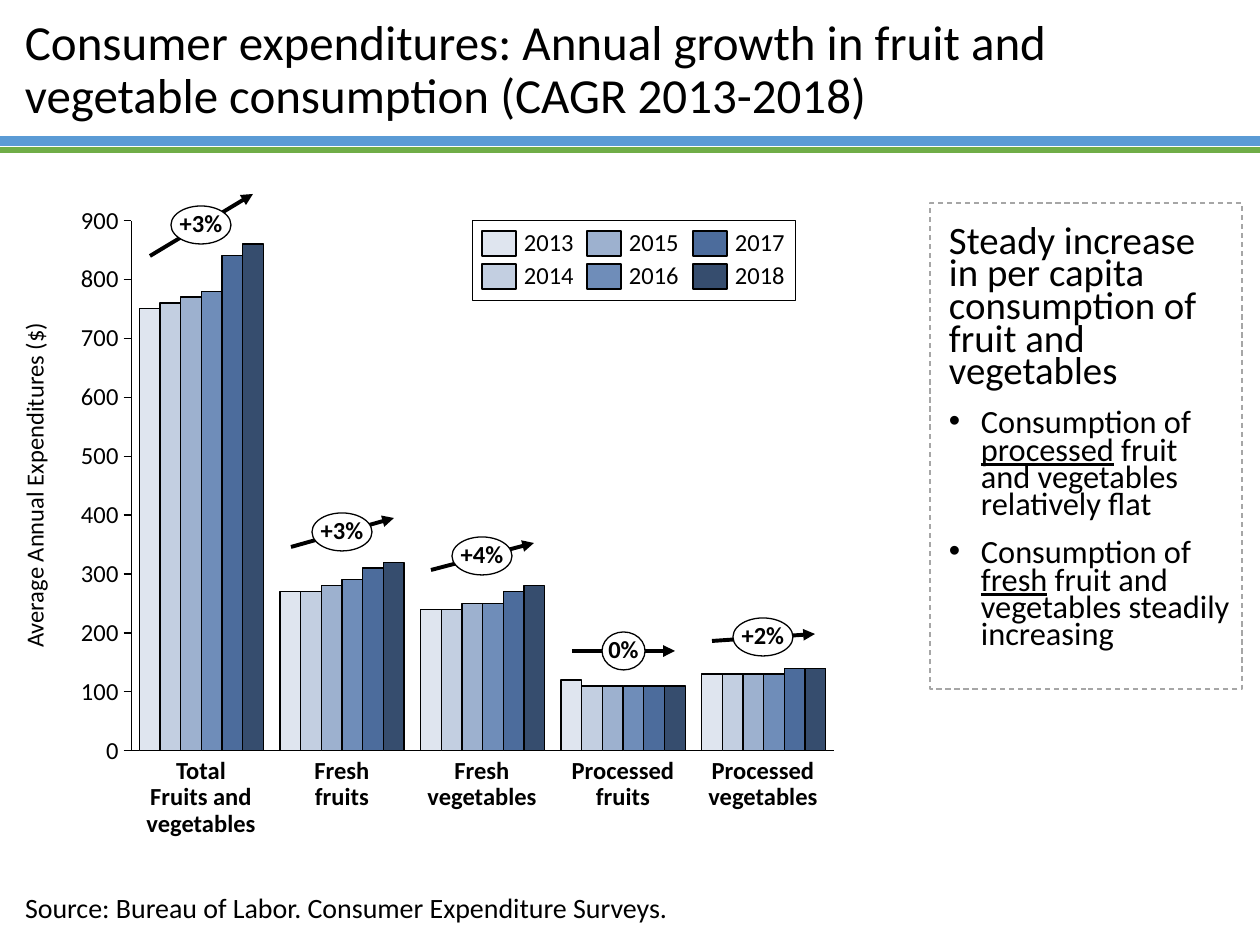
from dataclasses import dataclass

from lxml.etree import SubElement
from pptx import Presentation
from pptx.chart.data import CategoryChartData
from pptx.dml.color import RGBColor
from pptx.enum.chart import XL_CHART_TYPE, XL_TICK_LABEL_POSITION as TickLabels, XL_TICK_MARK as Tick
from pptx.enum.dml import MSO_LINE
from pptx.enum.shapes import MSO_CONNECTOR, MSO_SHAPE
from pptx.enum.text import MSO_ANCHOR as Anchor, PP_ALIGN as Align
from pptx.oxml import parse_xml
from pptx.oxml.ns import nsdecls, qn
from pptx.util import Pt


@dataclass(frozen=True)
class Theme:
    font: str = "Calibri"
    ink: RGBColor = RGBColor.from_string("000000")
    paper: RGBColor = RGBColor.from_string("FFFFFF")
    blue: RGBColor = RGBColor.from_string("5B9BD5")
    green: RGBColor = RGBColor.from_string("70AD47")
    frame: RGBColor = RGBColor.from_string("A6A6A6")
    bars: tuple = ("DFE5EF", "C3CFE1", "9DB1CF", "6F8DB9", "4C6C9C", "364D6E")
    title: float = 28
    heading: float = 22.2
    bullet: float = 18.5
    source: float = 16
    label: float = 14


theme = Theme()
EMU_PER_PX = 914400 / 126


def px(*lengths):
    """Turn pixel lengths into a list of EMU."""
    return [round(length * EMU_PER_PX) for length in lengths]


def write(frame, text, size=theme.label, bold=False, align=Align.LEFT, anchor=Anchor.TOP,
          insets=(0, 0, 0, 0), wrap=False, spacing=0.9, after=0, bullet=False):
    """Add a paragraph to a text frame; words between underscores are underlined."""
    frame.word_wrap = wrap
    frame.vertical_anchor = anchor
    frame.margin_left, frame.margin_top, frame.margin_right, frame.margin_bottom = px(*insets)
    paragraph = frame.add_paragraph() if frame.text else frame.paragraphs[0]
    paragraph.alignment = align
    paragraph.line_spacing = spacing
    paragraph.space_after = Pt(after)
    if bullet:
        properties = paragraph._p.get_or_add_pPr()
        indent, = px(32)
        properties.set("marL", str(indent))
        properties.set("indent", str(-indent))
        SubElement(properties, qn("a:buFont"), typeface="Arial")
        SubElement(properties, qn("a:buChar"), char="•")
    for index, part in enumerate(text.split("_")):
        run = paragraph.add_run()
        run.text = part
        font = run.font
        font.name, font.size, font.bold = theme.font, Pt(size), bold
        font.color.rgb = theme.ink
        if index % 2:
            font.underline = True


presentation = Presentation()
presentation.slide_width, presentation.slide_height = px(1260, 945)
slide = presentation.slides.add_slide(presentation.slide_layouts[6])
shapes = slide.shapes

# Title, stripes and source
title = shapes.add_textbox(*px(13, 13, 1247, 116))
write(title.text_frame,
      "Consumer expenditures: Annual growth in fruit and vegetable consumption (CAGR 2013-2018)",
      size=theme.title, anchor=Anchor.MIDDLE, insets=(12, 6, 12, 6), wrap=True)
source = shapes.add_textbox(*px(13, 885, 698, 47))
write(source.text_frame, "Source: Bureau of Labor. Consumer Expenditure Surveys.",
      size=theme.source, insets=(12, 6, 12, 6), spacing=1.0)

# Column chart
years = ["2013", "2014", "2015", "2016", "2017", "2018"]
categories = ["Total Fruits and vegetables", "Fresh fruits", "Fresh vegetables",
              "Processed fruits", "Processed vegetables"]
expenditures = [
    (750, 270, 240, 120, 130),
    (760, 270, 240, 110, 130),
    (770, 280, 250, 110, 130),
    (780, 290, 250, 110, 130),
    (840, 310, 270, 110, 140),
    (860, 320, 280, 110, 140),
]
chart_data = CategoryChartData()
chart_data.categories = categories
for year, values in zip(years, expenditures):
    chart_data.add_series(year, values)
chart = shapes.add_chart(XL_CHART_TYPE.COLUMN_CLUSTERED, *px(57, 203, 789, 566), chart_data).chart
chart.has_legend = False
chart.has_title = False
chart.font.name, chart.font.size = theme.font, Pt(theme.label)
chart.font.color.rgb = theme.ink

plot = chart.plots[0]
plot.gap_width, plot.overlap, plot.vary_by_categories = 80, 0, False
for series, color in zip(plot.series, theme.bars):
    series.format.fill.solid()
    series.format.fill.fore_color.rgb = RGBColor.from_string(color)
    series.format.line.color.rgb = theme.ink
    series.format.line.width = Pt(0.75)

for axis in (chart.category_axis, chart.value_axis):
    axis.has_major_gridlines = False
    axis.major_tick_mark = axis.minor_tick_mark = Tick.NONE
    axis.format.line.color.rgb = theme.ink
    axis.format.line.width = Pt(0.75)
chart.category_axis.tick_label_position = TickLabels.NONE
value_axis = chart.value_axis
value_axis.major_tick_mark = Tick.OUTSIDE
value_axis.minimum_scale, value_axis.maximum_scale, value_axis.major_unit = 0, 900, 100
value_axis.tick_labels.number_format = '#,##0;"-"#,##0'
value_axis.tick_labels.number_format_is_linked = False

plot_area = chart._chartSpace.chart.plotArea
for layout in plot_area.findall(qn("c:layout")):
    plot_area.remove(layout)
plot_area.insert(0, parse_xml(
    f'<c:layout {nsdecls("c")}><c:manualLayout><c:layoutTarget val="inner"/>'
    '<c:xMode val="edge"/><c:yMode val="edge"/><c:x val="0.094"/><c:y val="0.031"/>'
    '<c:w val="0.891"/><c:h val="0.937"/></c:manualLayout></c:layout>'))

axis_title = shapes.add_textbox(*px(23, 323, 26, 325)).text_frame
write(axis_title, "Average Annual Expenditures ($)", anchor=Anchor.BOTTOM)
axis_title._txBody.bodyPr.set("vert", "vert270")

# Category labels, and the ends of each growth arrow
growth = [("+3%", 256, 194), ("+3%", 547, 518), ("+4%", 570, 543), ("0%", 651, 651), ("+2%", 641, 634)]
PLOT_WIDTH = 703
lines = [((0, 141, 1260, 141), theme.blue, 6, False), ((0, 150, 1260, 150), theme.green, 3, False)]
ovals = []
for index, (category, (rate, start, end)) in enumerate(zip(categories, growth)):
    center = 201 + round(index * PLOT_WIDTH / len(categories))
    label = shapes.add_textbox(*px(center - 56, 758, 112, 53))
    write(label.text_frame, category, bold=True, align=Align.CENTER, wrap=category != "Fresh fruits")
    lines.append(((center - 51, start, center + 52, end), theme.ink, 2.25, True))
    width = 20 * len(rate) if len(rate) > 2 else 43
    ovals.append((rate, (center - width // 2, (start + end) // 2 - 19, width, 38)))

for ends, color, weight, arrow in lines:
    connector = shapes.add_connector(MSO_CONNECTOR.STRAIGHT, *px(*ends))
    connector.line.color.rgb = color
    connector.line.width = Pt(weight)
    if arrow:
        SubElement(connector.line._get_or_add_ln(), qn("a:tailEnd"), type="triangle")
    SubElement(connector._element.spPr, qn("a:effectLst"))

# Outlined shapes: growth ovals, legend and takeaway panel
outlined = [(MSO_SHAPE.OVAL, box, theme.paper, theme.ink, 0.75, rate) for rate, box in ovals]
outlined.append((MSO_SHAPE.RECTANGLE, (472, 220, 323, 80), None, theme.ink, 0.25, ""))
for index, (year, color) in enumerate(zip(years, theme.bars)):
    column, row = divmod(index, 2)
    left, top = 482 + 211 * column // 2, 231 + 33 * row
    outlined.append((MSO_SHAPE.RECTANGLE, (left, top, 34, 25), RGBColor.from_string(color),
                     theme.ink, 0.75, ""))
    year_label = shapes.add_textbox(*px(left + 42, top, 50, 26))
    write(year_label.text_frame, year, anchor=Anchor.MIDDLE)
outlined.append((MSO_SHAPE.RECTANGLE, (930, 203, 312, 486), None, theme.frame, 0.75, ""))

for kind, box, fill, line, weight, text in outlined:
    shape = shapes.add_shape(kind, *px(*box))
    shape.shadow.inherit = False
    if fill is None:
        shape.fill.background()
    else:
        shape.fill.solid()
        shape.fill.fore_color.rgb = fill
    shape.line.color.rgb = line
    shape.line.width = Pt(weight)
    if text:
        write(shape.text_frame, text, bold=True, align=Align.CENTER, anchor=Anchor.MIDDLE)

panel = shape
panel.line.dash_style = MSO_LINE.DASH
takeaways = [
    ("Steady increase in per capita consumption of fruit and vegetables", theme.heading, False),
    ("Consumption of _processed_ fruit and vegetables relatively flat", theme.bullet, True),
    ("Consumption of _fresh_ fruit and vegetables steadily increasing", theme.bullet, True),
]
for text, size, bullet in takeaways:
    write(panel.text_frame, text, size=size, bullet=bullet, insets=(19, 25, 12, 12),
          wrap=True, spacing=0.7, after=12)

presentation.save("out.pptx")
